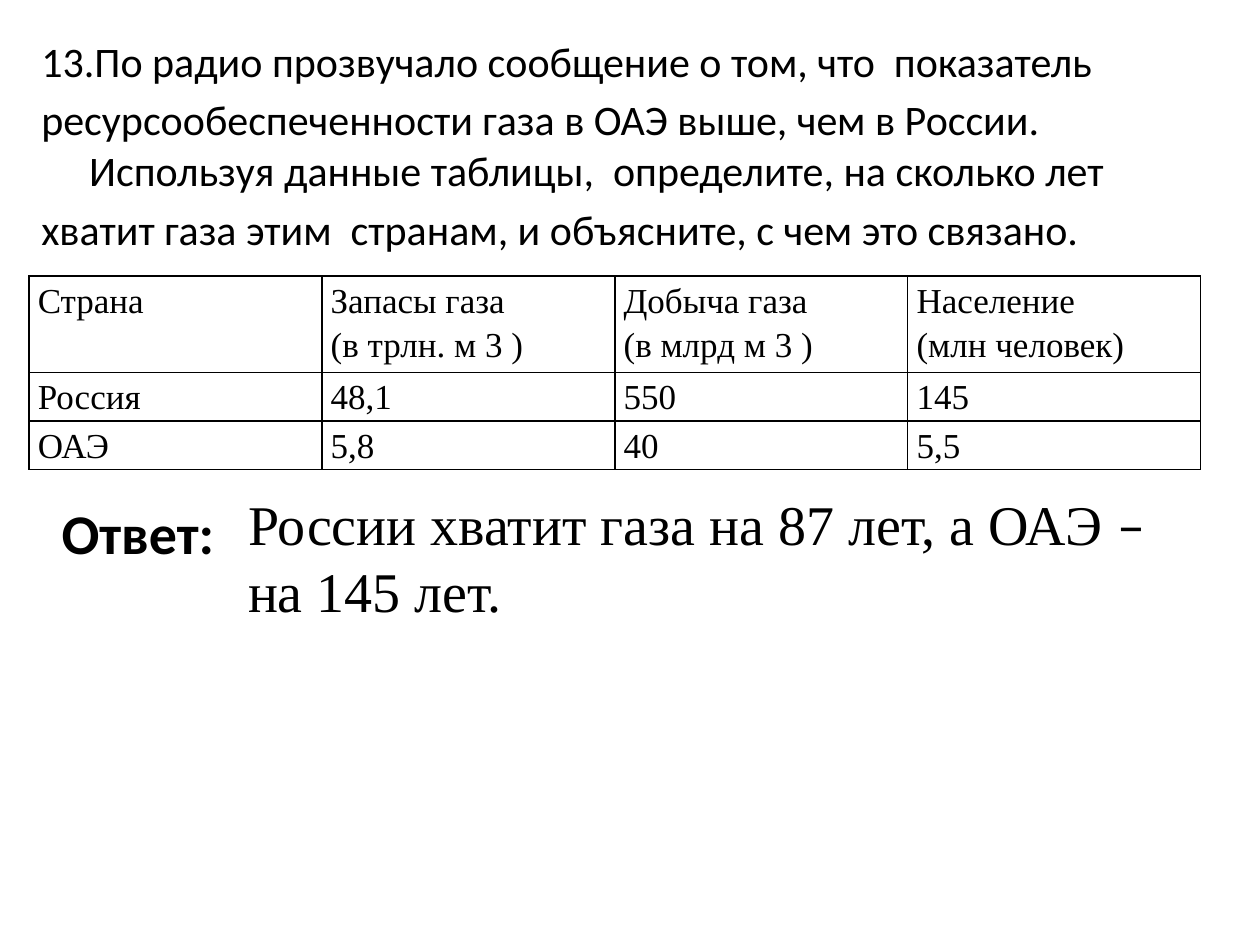
import pptx
import pptx.enum.text
import pptx.oxml
import pptx.oxml.ns
import pptx.util
from pptx.dml.color import RGBColor
from pptx.util import Inches

COLORS = {"ink": "000000", "paper": "FFFFFF"}
SERIF = "Times New Roman"


def write(paragraph, text, size=24, font="Calibri", bold=False, before=None,
          spacing=None, hanging=None):
    span = paragraph.add_run()
    span.text = text
    span.font.size = pptx.util.Pt(size)
    span.font.name = font
    span.font.bold = bold
    span.font.color.rgb = RGBColor.from_string(COLORS["ink"])
    if before is not None:
        paragraph.space_before = pptx.util.Pt(before)
    if spacing is not None:
        paragraph.line_spacing = spacing
    if hanging is not None:
        properties = paragraph._p.get_or_add_pPr()
        properties.set("marL", str(Inches(hanging)))
        properties.set("indent", str(-Inches(hanging)))


def outline_cell(cell, width):
    """Draw a solid line of the given point width on all four sides."""
    properties = cell._tc.get_or_add_tcPr()
    for index, side in enumerate(("lnL", "lnR", "lnT", "lnB")):
        line = pptx.oxml.parse_xml(
            f'<a:{side} {pptx.oxml.ns.nsdecls("a")} w="{pptx.util.Pt(width)}">'
            f'<a:solidFill><a:srgbClr val="{COLORS["ink"]}"/></a:solidFill>'
            f'</a:{side}>')
        properties.insert(index, line)


deck = pptx.Presentation()
deck.slide_width = Inches(10)
deck.slide_height = Inches(7.5)
page = deck.slides.add_slide(deck.slide_layouts[6])
page.background.fill.solid()
page.background.fill.fore_color.rgb = RGBColor.from_string(COLORS["paper"])

# Question
question = page.shapes.add_textbox(Inches(0.23), Inches(0.23), Inches(9.53), Inches(2.11))
question.text_frame.word_wrap = True
question_lines = [
    "13.По радио прозвучало сообщение о том, что  показатель",
    "ресурсообеспеченности газа в ОАЭ выше, чем в России. "
    "Используя данные таблицы,  определите, на сколько лет",
    "хватит газа этим  странам, и объясните, с чем это связано.",
]
for index, text in enumerate(question_lines):
    frame = question.text_frame
    paragraph = frame.add_paragraph() if index else frame.paragraphs[0]
    write(paragraph, text, before=4.8, hanging=0.38)

# Gas data
rows = [
    ["Страна", "Запасы газа\n(в трлн. м 3 )", "Добыча газа\n(в млрд м 3 )",
     "Население\n(млн человек)"],
    ["Россия", "48,1", "550", "145"],
    ["ОАЭ", "5,8", "40", "5,5"],
]
row_heights = [0.71, 0.35, 0.35]
gas_table = page.shapes.add_table(len(rows), len(rows[0]), Inches(0.23), Inches(2.19),
                                  Inches(9.3), Inches(sum(row_heights))).table
gas_table.first_row = False
gas_table.horz_banding = False
for row_index, values in enumerate(rows):
    gas_table.rows[row_index].height = Inches(row_heights[row_index])
    for column_index, value in enumerate(values):
        cell = gas_table.cell(row_index, column_index)
        cell.margin_left = cell.margin_right = Inches(0.07)
        cell.margin_top = cell.margin_bottom = 0
        cell.fill.background()
        outline_cell(cell, 1)
        for index, text in enumerate(value.split("\n")):
            frame = cell.text_frame
            paragraph = frame.add_paragraph() if index else frame.paragraphs[0]
            write(paragraph, text, size=20, font=SERIF, spacing=1.15)

# Answer
label = page.shapes.add_textbox(Inches(0.39), Inches(3.91), Inches(1.43), Inches(0.64))
label.text_frame.word_wrap = False
write(label.text_frame.paragraphs[0], "Ответ:", size=32, bold=True)

answer = page.shapes.add_textbox(Inches(1.87), Inches(3.83), Inches(7.58), Inches(1.18))
answer.text_frame.word_wrap = True
answer.text_frame.vertical_anchor = pptx.enum.text.MSO_ANCHOR.MIDDLE
for text, font in [("России хватит газа на 87 лет, а ОАЭ ", SERIF),
                   ("–", "Calibri"), (" на 145 лет.", SERIF)]:
    write(answer.text_frame.paragraphs[0], text, size=32, font=font)

deck.save("out.pptx")
